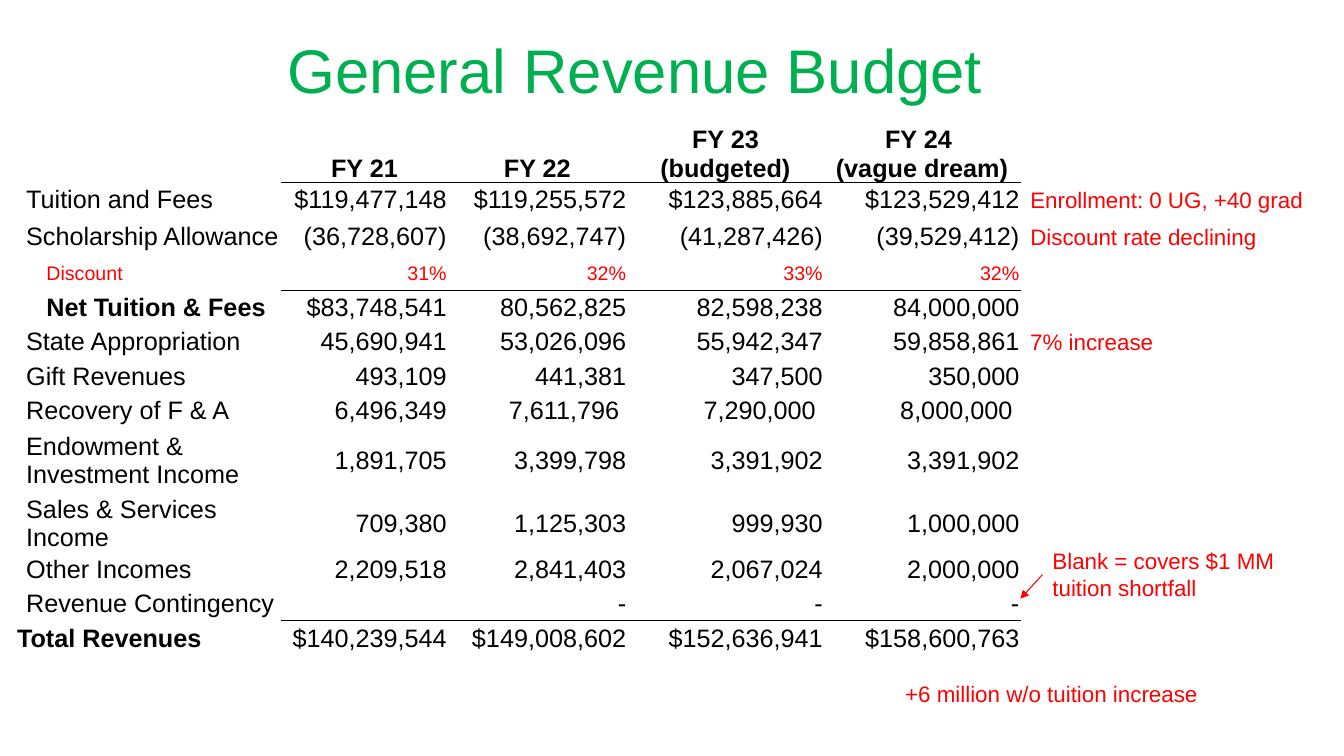
import dataclasses
import pptx
import pptx.dml.color
import pptx.enum.shapes
import pptx.enum.text
import pptx.oxml
import pptx.oxml.ns
import pptx.util

PX = 9144  # EMU in one px, at 100 px to the inch
ALIGN = pptx.enum.text.PP_ALIGN
ANCHOR = pptx.enum.text.MSO_ANCHOR


@dataclasses.dataclass(frozen=True)
class Theme:
    face: str = "Arial"
    title: str = "00B050"
    ink: str = "000000"
    note: str = "FF0000"
    paper: str = "FFFFFF"
    head_size: int = 44
    body_size: int = 18
    note_size: int = 16
    rate_size: int = 14


THEME = Theme()
LEFT, TOP = 16, 123
COLS = [263, 165, 178, 195, 195]
HEADS = ["", "FY 21", "FY 22", "FY 23 (budgeted)", "FY 24 \n(vague dream)"]

# Height, label indent, label, then one value for each year
ROWS = [
    (34, 10, "Tuition and Fees", "$119,477,148", "$119,255,572", "$123,885,664", "$123,529,412"),
    (39, 10, "Scholarship Allowance", "(36,728,607)", "(38,692,747)", "(41,287,426)", "(39,529,412)"),
    (34, 30, "Discount", "31%", "32%", "33%", "32%"),
    (34, 30, "Net Tuition & Fees", "$83,748,541", "80,562,825", "82,598,238", "84,000,000"),
    (34, 10, "State Appropriation", "45,690,941", "53,026,096", "55,942,347", "59,858,861"),
    (34, 10, "Gift Revenues", "493,109", "441,381", "347,500", "350,000"),
    (34, 10, "Recovery of F & A", "6,496,349", "7,611,796 ", "7,290,000 ", "8,000,000 "),
    (66, 10, "Endowment & Investment Income", "1,891,705", "3,399,798", "3,391,902", "3,391,902"),
    (58, 10, "Sales & Services Income", "709,380", "1,125,303", "999,930", "1,000,000"),
    (34, 10, "Other Incomes", "2,209,518", "2,841,403", "2,067,024", "2,000,000"),
    (34, 10, "Revenue Contingency", "", "-", "-", "-"),
    (34, 1, "Total Revenues", "$140,239,544", "$149,008,602", "$152,636,941", "$158,600,763"),
]
RATE = "Discount"
BOLD = {"Net Tuition & Fees", "Total Revenues"}
RULED = {0, 3, 11}  # table rows with a line below their values

NOTES = [
    (1012, 180, 321, 37, "Enrollment: 0 UG, +40 grad"),
    (1012, 216, 321, 37, "Discount rate declining"),
    (1012, 321, 283, 37, "7% increase"),
    (1034, 538, 283, 64, "Blank = covers $1 MM tuition shortfall"),
    (888, 670, 360, 37, "+6 million w/o tuition increase"),
]


def put(item, values):
    for name, value in values.items():
        setattr(item, name, value)


def rgb(code):
    return pptx.dml.color.RGBColor.from_string(code)


def write(frame, text, size, color, bold=False, **para):
    frame.text = text
    for line in frame.paragraphs:
        put(line, para)
        for run in line.runs:
            put(run.font, {"name": THEME.face, "size": pptx.util.Pt(size), "bold": bold})
            run.font.color.rgb = rgb(color)


def add_title(slide, text):
    title = slide.shapes.title
    put(title, {"left": 55 * PX, "top": 0, "width": 1150 * PX, "height": 145 * PX})
    put(title.text_frame, {"vertical_anchor": ANCHOR.MIDDLE, "word_wrap": True,
                           "auto_size": pptx.enum.text.MSO_AUTO_SIZE.NONE})
    write(title.text_frame, text, THEME.head_size, THEME.title,
          alignment=ALIGN.CENTER, line_spacing=0.9)


def add_rule(cell, side):
    """Draw a black edge on a cell; side is "T" or "B"."""
    edge = pptx.oxml.parse_xml(
        f'<a:ln{side} {pptx.oxml.ns.nsdecls("a")} w="12700"><a:solidFill>'
        f'<a:srgbClr val="{THEME.ink}"/></a:solidFill></a:ln{side}>')
    cell._tc.get_or_add_tcPr().insert(0, edge)


def fill_cell(cell, text, indent=1, anchor=ANCHOR.MIDDLE, size=THEME.body_size,
              color=THEME.ink, **style):
    put(cell, {"margin_left": indent * PX, "margin_right": PX, "margin_top": PX,
               "margin_bottom": 0, "vertical_anchor": anchor})
    cell.fill.solid()
    cell.fill.fore_color.rgb = rgb(THEME.paper)
    write(cell.text_frame, text, size, color, **style)


def add_budget(slide):
    heights = [58] + [row[0] for row in ROWS]
    frame = slide.shapes.add_table(len(heights), len(COLS), LEFT * PX, TOP * PX,
                                   sum(COLS) * PX, sum(heights) * PX)
    table = frame.table
    put(table, {"first_row": False, "horz_banding": False})
    for col, width in zip(table.columns, COLS):
        col.width = width * PX
    for row, height in zip(table.rows, heights):
        row.height = height * PX
    for c, text in enumerate(HEADS):
        fill_cell(table.cell(0, c), text, anchor=ANCHOR.BOTTOM, bold=True,
                  alignment=ALIGN.CENTER)
    for r, (_, indent, label, *values) in enumerate(ROWS, 1):
        look = {"size": THEME.rate_size, "color": THEME.note} if label == RATE else {}
        fill_cell(table.cell(r, 0), label, indent, bold=label in BOLD, **look)
        for c, value in enumerate(values, 1):
            fill_cell(table.cell(r, c), value, alignment=ALIGN.RIGHT, **look)
    for r in RULED:
        for c in range(1, len(COLS)):
            add_rule(table.cell(r, c), "B")
            add_rule(table.cell(r + 1, c), "T")


def add_note(slide, x, y, width, height, text):
    box = slide.shapes.add_textbox(x * PX, y * PX, width * PX, height * PX)
    box.text_frame.word_wrap = True
    write(box.text_frame, text, THEME.note_size, THEME.note)


def add_arrow(slide, x1, y1, x2, y2):
    line = slide.shapes.add_connector(pptx.enum.shapes.MSO_CONNECTOR.STRAIGHT,
                                      x1 * PX, y1 * PX, x2 * PX, y2 * PX)
    line.line.color.rgb = rgb(THEME.note)
    line.line.width = pptx.util.Pt(0.75)
    space = pptx.oxml.ns.nsdecls("a")
    line.line._get_or_add_ln().append(
        pptx.oxml.parse_xml(f'<a:tailEnd {space} type="triangle"/>'))
    line._element.spPr.append(pptx.oxml.parse_xml(f"<a:effectLst {space}/>"))


def main():
    deck = pptx.Presentation()
    put(deck, {"slide_width": 1333 * PX, "slide_height": 750 * PX})
    slide = deck.slides.add_slide(deck.slide_layouts.get_by_name("Title Only"))
    add_title(slide, "General Revenue Budget")
    add_budget(slide)
    for note in NOTES:
        add_note(slide, *note)
    add_arrow(slide, 1034, 570, 1012, 594)
    deck.save("out.pptx")


if __name__ == "__main__":
    main()
